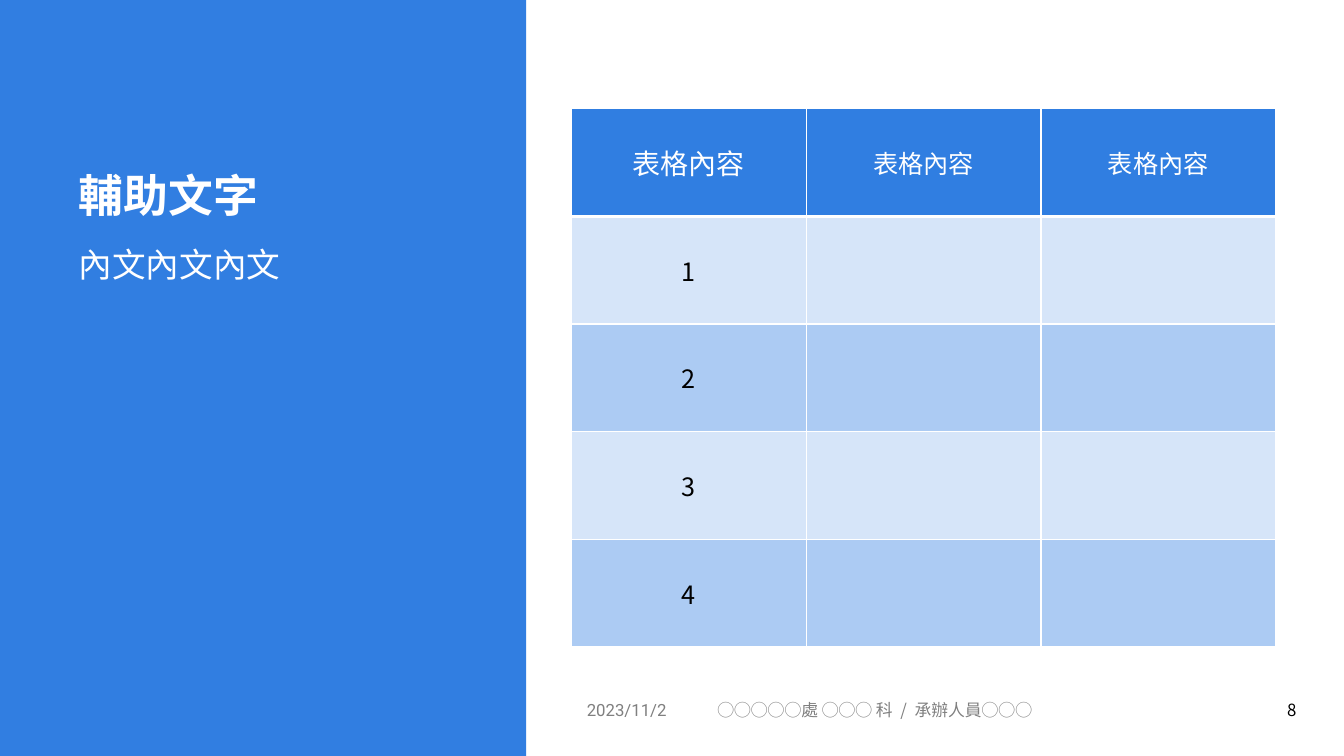
"""Build a slide with a blue caption panel, a table and a footer."""
from lxml.etree import SubElement
from pptx import Presentation
from pptx.dml.color import RGBColor
from pptx.enum.shapes import MSO_SHAPE
from pptx.enum.text import MSO_ANCHOR, MSO_AUTO_SIZE, PP_ALIGN
from pptx.oxml.ns import qn
from pptx.util import Cm, Pt

PANEL_BLUE = RGBColor(0x31, 0x7E, 0xE1)
HEADER_BLUE = RGBColor(0x30, 0x7E, 0xE1)
PALE_BLUE = RGBColor(0xD6, 0xE5, 0xF9)
MID_BLUE = RGBColor(0xAC, 0xCB, 0xF3)
WHITE = RGBColor(0xFF, 0xFF, 0xFF)
BLACK = RGBColor(0, 0, 0)
GRAY = RGBColor(0x80, 0x80, 0x80)
CJK_FONT = "Noto Sans CJK TC"
LATIN_FONT = "Roboto"
HEADINGS = [("表格內容", 20), ("表格內容", 18), ("表格內容", 18)]
ROW_COUNT = 5


def write(frame, text, size, color, align=PP_ALIGN.LEFT, name=CJK_FONT, bold=False):
    """Put one formatted paragraph into a text frame."""
    para = frame.paragraphs[0]
    para.text = text
    para.alignment = align
    para.space_before = Pt(0)
    font = para.font
    font.size, font.name, font.bold = Pt(size), name, bold
    font.color.rgb = color
    properties = para._p.pPr.find(qn("a:defRPr"))
    SubElement(properties, qn("a:ea")).set("typeface", name)
    return para


def add_panel(page, height):
    """Add the blue panel behind everything else."""
    panel = page.shapes.add_shape(MSO_SHAPE.RECTANGLE, 0, 0, Cm(13.26), height)
    panel.shadow.inherit = False
    panel.fill.solid()
    panel.fill.fore_color.rgb = PANEL_BLUE
    panel.line.fill.background()
    page.shapes._spTree.insert(2, panel._element)


def place(holder, top, height, anchor):
    """Move a placeholder into the panel and return its text frame."""
    holder.left, holder.top = Cm(1.73), Cm(top)
    holder.width, holder.height = Cm(10.24), Cm(height)
    frame = holder.text_frame
    frame.word_wrap = True
    frame.auto_size = MSO_AUTO_SIZE.NONE
    frame.vertical_anchor = anchor
    return frame


def add_border(cell, side, width):
    """Draw one white cell border."""
    line = SubElement(cell._tc.get_or_add_tcPr(), qn(f"a:ln{side}"), w=str(Pt(width)))
    fill = SubElement(line, qn("a:solidFill"))
    SubElement(fill, qn("a:srgbClr"), val=str(WHITE))


def style_cell(cell, row):
    """Give a cell its borders, fill and anchor."""
    for side in "LRTB":
        heavy = (row, side) in ((0, "B"), (1, "T"))
        add_border(cell, side, 3 if heavy else 1)
    cell.fill.solid()
    banding = PALE_BLUE if row % 2 else MID_BLUE
    cell.fill.fore_color.rgb = banding if row else HEADER_BLUE
    cell.vertical_anchor = MSO_ANCHOR.MIDDLE


def add_grid(page):
    """Add the table with its headings and numbered rows."""
    frame = page.shapes.add_table(
        ROW_COUNT, len(HEADINGS), Cm(14.4), Cm(2.74), Cm(17.75), Cm(13.56))
    table = frame.table
    for row in range(ROW_COUNT):
        for column in range(len(HEADINGS)):
            style_cell(table.cell(row, column), row)
    for column, (heading, size) in enumerate(HEADINGS):
        write(table.cell(0, column).text_frame, heading, size, WHITE, PP_ALIGN.CENTER)
    for row in range(1, ROW_COUNT):
        write(table.cell(row, 0).text_frame, str(row), 18, BLACK, PP_ALIGN.CENTER)


def add_footer(page, left, width, text, color, align, name=CJK_FONT):
    """Add one text box of the footer line."""
    box = page.shapes.add_textbox(Cm(left), Cm(17.37), Cm(width), Cm(1.02))
    frame = box.text_frame
    frame.word_wrap = True
    frame.vertical_anchor = MSO_ANCHOR.MIDDLE
    write(frame, text, 12, color, align, name)


def main():
    """Build and save the slide."""
    deck = Presentation()
    deck.slide_width, deck.slide_height = Cm(33.87), Cm(19.05)
    page = deck.slides.add_slide(deck.slide_layouts.get_by_name("Content with Caption"))
    title, content, body = page.placeholders
    content._element.getparent().remove(content._element)

    add_panel(page, deck.slide_height)
    write(place(title, 1.27, 4.45, MSO_ANCHOR.BOTTOM), "輔助文字", 32, WHITE, bold=True)
    para = write(place(body, 5.72, 10.59, MSO_ANCHOR.TOP), "內文內文內文", 24, WHITE)
    para.line_spacing = 1.3
    add_grid(page)
    add_footer(page, 14.4, 2.79, "2023/11/2", GRAY, PP_ALIGN.CENTER, LATIN_FONT)
    add_footer(page, 17.83, 12.75, "◯◯◯◯◯處 ◯◯◯ 科  /  承辦人員◯◯◯", GRAY, PP_ALIGN.LEFT)
    add_footer(page, 31.24, 1.68, "8", BLACK, PP_ALIGN.RIGHT)
    deck.save("out.pptx")


if __name__ == "__main__":
    main()
